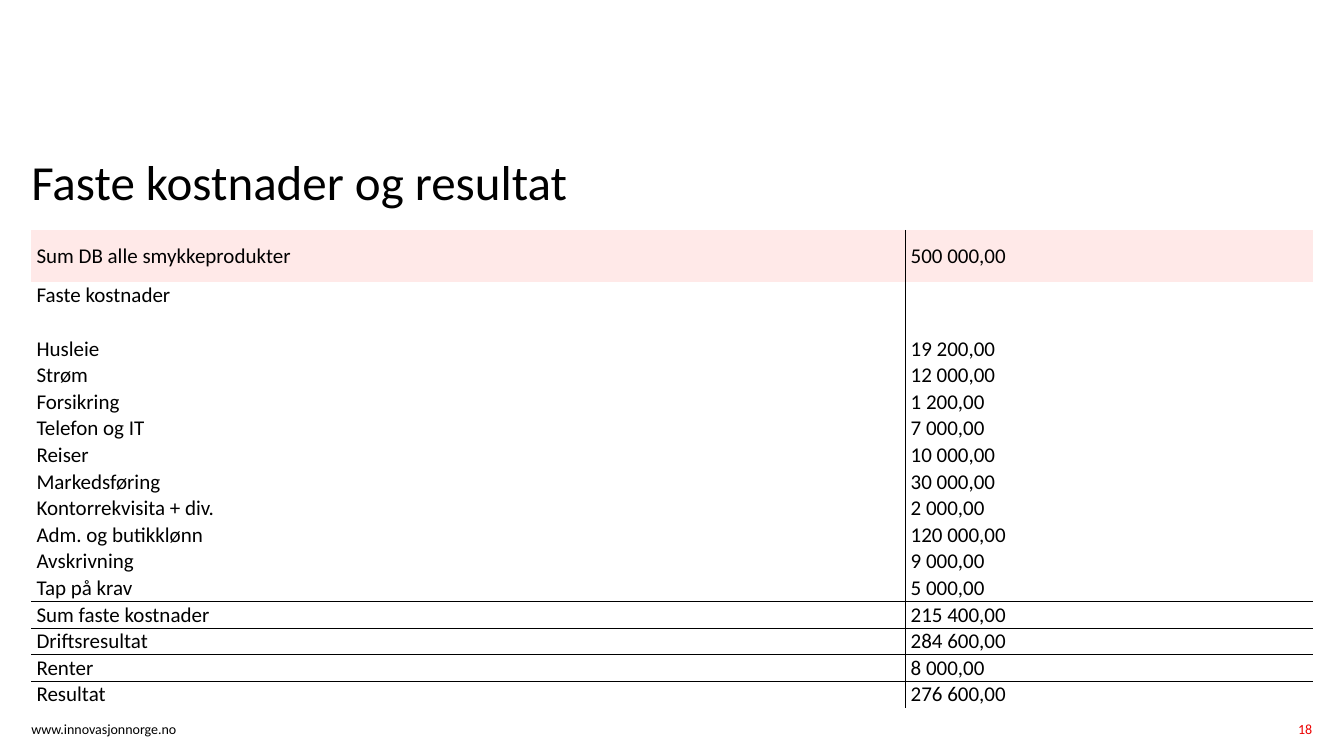
from dataclasses import dataclass

from lxml import etree
from pptx import Presentation
from pptx import util as u
from pptx.dml.color import RGBColor
from pptx.enum import text
from pptx.oxml import ns

FONT = "Calibri"
COLORS = {"ink": "000000", "accent": "ED0000", "highlight": "FFE9E8"}
ROW_HEIGHT = 0.67
COLUMN_LINE, ROW_LINE = 1, 0.5


@dataclass
class Label:
    wording: str
    left: float
    top: float
    width: float
    height: float
    size: float
    color: str = "ink"
    align: text.PP_ALIGN = text.PP_ALIGN.LEFT
    spacing: float = 1.0


@dataclass
class BudgetRow:
    name: str
    amount: str
    height: float = ROW_HEIGHT
    anchor: text.MSO_ANCHOR = text.MSO_ANCHOR.BOTTOM
    fill: str = ""
    line_above: bool = False


LABELS = [
    Label("www.innovasjonnorge.no", 0.79, 18.16, 7.24, 0.48, 10),
    Label("Faste kostnader og resultat", 0.79, 3.99, 14.38, 3.58, 35, spacing=0.9),
    Label("18", 30.33, 18.16, 2.74, 0.61, 10, "accent", text.PP_ALIGN.RIGHT),
]

BUDGET = [
    BudgetRow("Sum DB alle smykkeprodukter", "500 000,00", 1.32,
              text.MSO_ANCHOR.MIDDLE, "highlight"),
    BudgetRow("Faste kostnader", "", 2 * ROW_HEIGHT, text.MSO_ANCHOR.TOP),
    BudgetRow("Husleie", "19 200,00"),
    BudgetRow("Strøm", "12 000,00"),
    BudgetRow("Forsikring", "1 200,00"),
    BudgetRow("Telefon og IT", "7 000,00"),
    BudgetRow("Reiser", "10 000,00"),
    BudgetRow("Markedsføring", "30 000,00"),
    BudgetRow("Kontorrekvisita + div.", "2 000,00"),
    BudgetRow("Adm. og butikklønn", "120 000,00"),
    BudgetRow("Avskrivning", "9 000,00"),
    BudgetRow("Tap på krav", "5 000,00"),
    BudgetRow("Sum faste kostnader", "215 400,00", line_above=True),
    BudgetRow("Driftsresultat", "284 600,00", line_above=True),
    BudgetRow("Renter", "8 000,00", line_above=True),
    BudgetRow("Resultat", "276 600,00", line_above=True),
]


def format_runs(paragraph, size: float, color: str = "ink") -> None:
    for run in paragraph.runs:
        run.font.name = FONT
        run.font.size = u.Pt(size)
        run.font.color.rgb = RGBColor.from_string(COLORS[color])


def add_label(slide, label: Label) -> None:
    box = slide.shapes.add_textbox(u.Cm(label.left), u.Cm(label.top),
                                   u.Cm(label.width), u.Cm(label.height))
    frame = box.text_frame
    frame.word_wrap = True
    frame.margin_left = frame.margin_right = frame.margin_top = frame.margin_bottom = 0
    frame.text = label.wording
    paragraph = frame.paragraphs[0]
    paragraph.alignment = label.align
    paragraph.line_spacing = label.spacing
    format_runs(paragraph, label.size, label.color)


def add_borders(cell, widths: dict[str, float]) -> None:
    properties = cell._tc.get_or_add_tcPr()
    for side in "LRTB":
        line = etree.SubElement(properties, ns.qn(f"a:ln{side}"))
        if side in widths:
            line.set("w", str(int(u.Pt(widths[side]))))
            fill = etree.SubElement(line, ns.qn("a:solidFill"))
            etree.SubElement(fill, ns.qn("a:srgbClr"), val=COLORS["ink"])
        else:
            etree.SubElement(line, ns.qn("a:noFill"))


def fill_cell(cell, wording: str, row: BudgetRow, borders: dict[str, float]) -> None:
    cell.margin_left = u.Cm(0.13)
    cell.margin_right = cell.margin_top = u.Cm(0.02)
    cell.margin_bottom = 0
    cell.vertical_anchor = row.anchor
    cell.text_frame.text = wording
    format_runs(cell.text_frame.paragraphs[0], 15)
    add_borders(cell, borders)
    if row.fill:
        cell.fill.solid()
        cell.fill.fore_color.rgb = RGBColor.from_string(COLORS[row.fill])
    else:
        cell.fill.background()


def add_budget_table(slide, rows: list[BudgetRow]) -> None:
    widths = (22.03, 10.27)
    frame = slide.shapes.add_table(len(rows), len(widths), u.Cm(0.79), u.Cm(5.79),
                                   u.Cm(sum(widths)), u.Cm(sum(row.height for row in rows)))
    table = frame.table
    table.first_row = table.horz_banding = False
    for column, width in zip(table.columns, widths):
        column.width = u.Cm(width)
    for index, row in enumerate(rows):
        table.rows[index].height = u.Cm(row.height)
        borders = {}
        if row.line_above:
            borders["T"] = ROW_LINE
        if index + 1 < len(rows) and rows[index + 1].line_above:
            borders["B"] = ROW_LINE
        fill_cell(table.cell(index, 0), row.name, row, borders | {"R": COLUMN_LINE})
        fill_cell(table.cell(index, 1), row.amount, row, borders | {"L": COLUMN_LINE})


def main() -> None:
    presentation = Presentation()
    presentation.slide_width, presentation.slide_height = u.Cm(33.87), u.Cm(19.05)
    slide = presentation.slides.add_slide(presentation.slide_layouts[6])

    # Title, footer and page number
    for label in LABELS:
        add_label(slide, label)

    # Fixed costs and result
    add_budget_table(slide, BUDGET)

    presentation.save("out.pptx")


if __name__ == "__main__":
    main()
